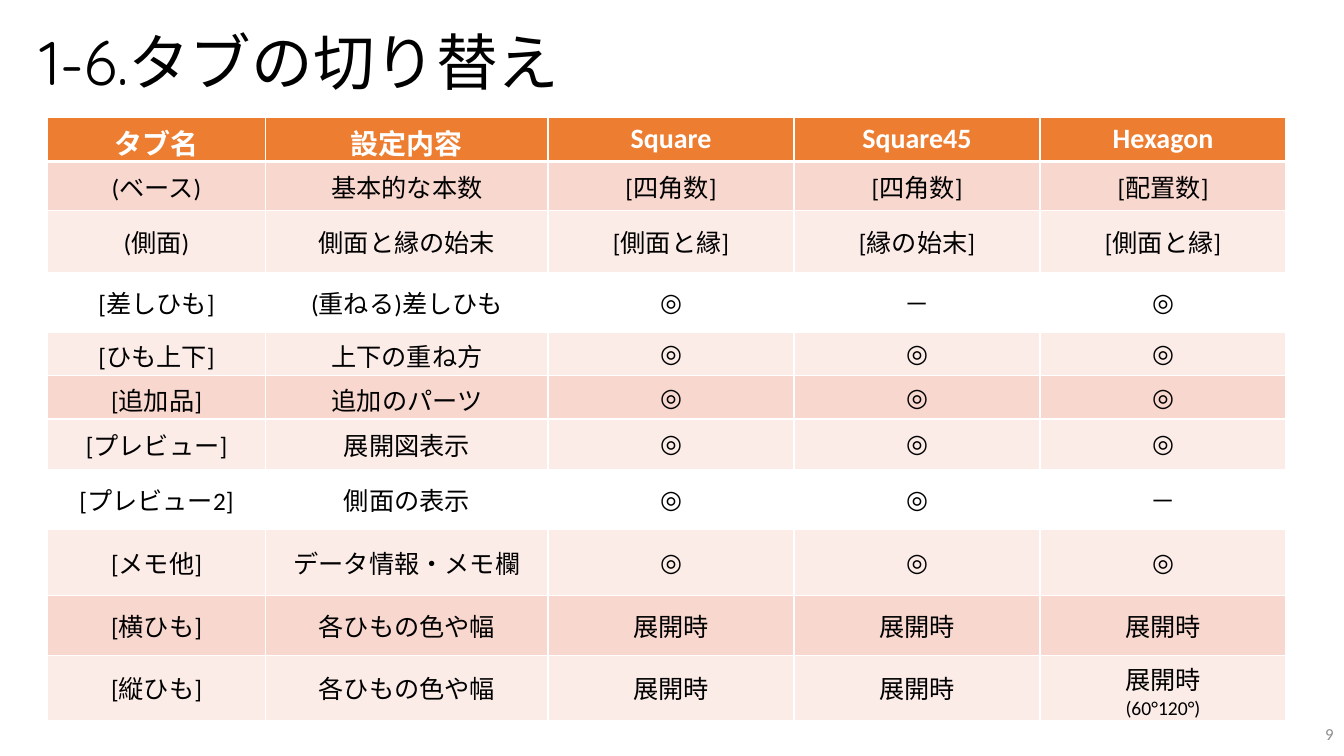
from dataclasses import dataclass
from itertools import cycle

from lxml import etree
from pptx import Presentation
from pptx.dml.color import RGBColor
from pptx.enum.text import MSO_ANCHOR, MSO_AUTO_SIZE, PP_ALIGN
from pptx.oxml.ns import qn
from pptx.util import Cm, Pt

LEFT, CENTER, RIGHT = PP_ALIGN.LEFT, PP_ALIGN.CENTER, PP_ALIGN.RIGHT
MIDDLE = MSO_ANCHOR.MIDDLE
NO_AUTOFIT = MSO_AUTO_SIZE.NONE
TITLE_ONLY = 5


@dataclass(frozen=True)
class Theme:
    title_font: str = "Quicksand"
    body_font: str = "Calibri"
    title_size: int = 44
    header_size: int = 20
    body_size: int = 18
    note_size: int = 14
    number_size: int = 12
    text: str = "000000"
    white: str = "FFFFFF"
    muted: str = "8C8C8C"
    header: str = "ED7D31"
    dark_band: str = "F8D7CE"
    light_band: str = "FCECE8"


THEME = Theme()
BANDS = (THEME.dark_band, THEME.light_band, None, THEME.light_band)
THIN, THICK = 1, 3

COLUMN_WIDTHS = (5.51, 7.11, 6.2, 6.2, 6.2)
ROW_HEIGHTS = (1.12, 1.24, 1.55, 1.52, 1.09, 1.09, 1.27, 1.52, 1.65, 1.52, 1.63)
HEADINGS = ("タブ名", "設定内容", "Square", "Square45", "Hexagon")
TAB_ROWS = (
    ("(ベース)", "基本的な本数", "[四角数]", "[四角数]", "[配置数]"),
    ("(側面)", "側面と縁の始末", "[側面と縁]", "[縁の始末]", "[側面と縁]"),
    ("[差しひも]", "(重ねる)差しひも", "◎", "－", "◎"),
    ("[ひも上下]", "上下の重ね方", "◎", "◎", "◎"),
    ("[追加品]", "追加のパーツ", "◎", "◎", "◎"),
    ("[プレビュー]", "展開図表示", "◎", "◎", "◎"),
    ("[プレビュー2]", "側面の表示", "◎", "◎", "－"),
    ("[メモ他]", "データ情報・メモ欄", "◎", "◎", "◎"),
    ("[横ひも]", "各ひもの色や幅", "展開時", "展開時", "展開時"),
    ("[縦ひも]", "各ひもの色や幅", "展開時", "展開時", "展開時\n(60°120°)"),
)


def format_paragraph(paragraph, font, size, color, alignment, bold=False):
    paragraph.alignment = alignment
    paragraph.font.name = font
    paragraph.font.size = Pt(size)
    paragraph.font.bold = bold
    paragraph.font.color.rgb = RGBColor.from_string(color)


def set_title(slide, text):
    title = slide.shapes.title
    title.left, title.top, title.width, title.height = Cm(0.74), Cm(0.28), Cm(32.31), Cm(2.72)
    frame = title.text_frame
    frame.text = text
    frame.auto_size = NO_AUTOFIT
    frame.vertical_anchor = MIDDLE
    paragraph = frame.paragraphs[0]
    paragraph.line_spacing = 0.9
    format_paragraph(paragraph, THEME.title_font, THEME.title_size, THEME.text, LEFT)


def add_page_number(slide, text):
    box = slide.shapes.add_textbox(Cm(26.24), Cm(17.98), Cm(7.62), Cm(1.02))
    frame = box.text_frame
    frame.word_wrap = True
    frame.vertical_anchor = MIDDLE
    frame.text = text
    format_paragraph(frame.paragraphs[0], THEME.body_font, THEME.number_size, THEME.muted, RIGHT)


def set_borders(cell, top, bottom):
    """Draw white borders; must run before the cell's fill is set."""
    properties = cell._tc.get_or_add_tcPr()
    for side, width in (("L", THIN), ("R", THIN), ("T", top), ("B", bottom)):
        line = etree.SubElement(properties, qn(f"a:ln{side}"), w=str(Pt(width)))
        fill = etree.SubElement(line, qn("a:solidFill"))
        etree.SubElement(fill, qn("a:srgbClr"), val=THEME.white)


def fill_cell(cell, color):
    if color is None:
        cell.fill.background()
    else:
        cell.fill.solid()
        cell.fill.fore_color.rgb = RGBColor.from_string(color)


def write_cell(cell, text, is_header):
    cell.vertical_anchor = MIDDLE
    cell.text_frame.text = text
    size = THEME.header_size if is_header else THEME.body_size
    color = THEME.white if is_header else THEME.text
    for paragraph in cell.text_frame.paragraphs:
        format_paragraph(paragraph, THEME.body_font, size, color, CENTER, is_header)
        size = THEME.note_size


def add_tab_table(slide):
    rows = (HEADINGS, *TAB_ROWS)
    frame = slide.shapes.add_table(len(rows), len(HEADINGS), Cm(1.19), Cm(2.95),
                                   Cm(sum(COLUMN_WIDTHS)), Cm(sum(ROW_HEIGHTS)))
    table = frame.table
    for column, width in zip(table.columns, COLUMN_WIDTHS):
        column.width = Cm(width)
    bands = cycle(BANDS)
    for index, (row, height, texts) in enumerate(zip(table.rows, ROW_HEIGHTS, rows)):
        row.height = Cm(height)
        is_header = index == 0
        color = THEME.header if is_header else next(bands)
        top = THICK if index == 1 else THIN
        bottom = THICK if is_header else THIN
        for cell, text in zip(row.cells, texts):
            set_borders(cell, top, bottom)
            fill_cell(cell, color)
            write_cell(cell, text, is_header)


def main():
    presentation = Presentation()
    presentation.slide_width, presentation.slide_height = Cm(33.87), Cm(19.05)
    slide = presentation.slides.add_slide(presentation.slide_layouts[TITLE_ONLY])
    set_title(slide, "1-6.タブの切り替え")
    add_page_number(slide, "9")
    add_tab_table(slide)
    presentation.save("out.pptx")


if __name__ == "__main__":
    main()
